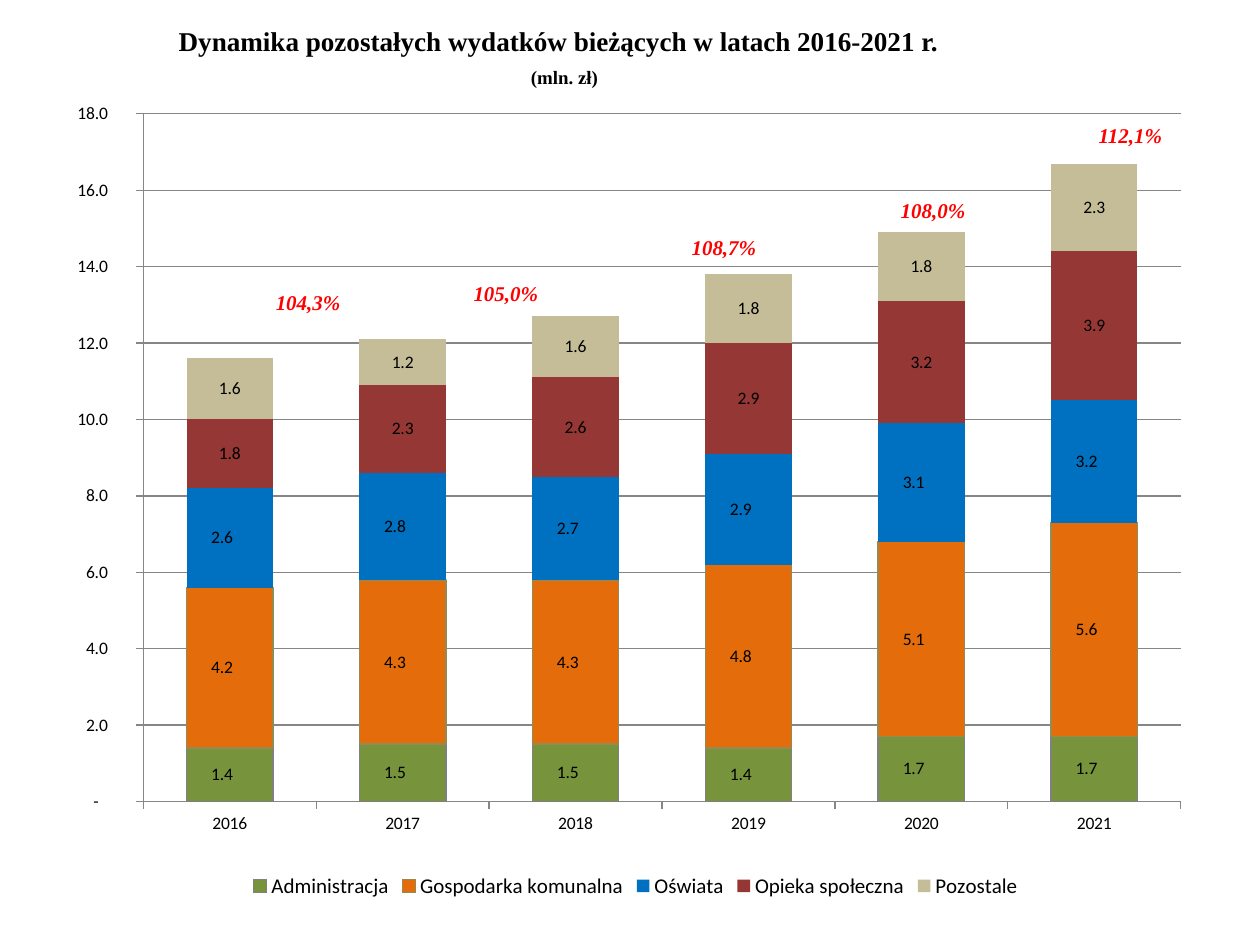
from dataclasses import dataclass

from lxml import etree
from pptx import Presentation
from pptx.chart.data import CategoryChartData
from pptx.dml.color import RGBColor
from pptx.enum.chart import XL_CHART_TYPE as ChartType
from pptx.enum.chart import XL_LABEL_POSITION as LabelPosition
from pptx.enum.chart import XL_LEGEND_POSITION as LegendPosition
from pptx.enum.chart import XL_TICK_MARK as TickMark
from pptx.enum.text import MSO_ANCHOR, MSO_AUTO_SIZE, PP_ALIGN
from pptx.oxml.ns import qn
from pptx.util import Inches, Pt


@dataclass(frozen=True)
class Theme:
    heading_font: str = "Times New Roman"
    chart_font: str = "Calibri"
    ink: str = "000000"
    growth: str = "FF0000"
    grid: str = "868686"
    title_size: float = 15.5
    unit_size: float = 10.8
    growth_size: float = 12
    legend_size: float = 12
    label_size: float = 10


THEME = Theme()
ACCOUNTING = (r"_-* #\ ##0.0\ _z_ł_-;\-* #\ ##0.0\ _z_ł_-;"
              r'_-* "-"?\ _z_ł_-;_-@_-')
PLAIN = "0.0"
PLOT_AREA = {"x": 0.09, "y": 0.069, "w": 0.864, "h": 0.811}

YEARS = ["2016", "2017", "2018", "2019", "2020", "2021"]
# name, values, fill, outline, label format
EXPENSES = [
    ("Administracja", (1.4, 1.5, 1.5, 1.4, 1.7, 1.7), "77933C", "808080", ACCOUNTING),
    ("Gospodarka komunalna", (4.2, 4.3, 4.3, 4.8, 5.1, 5.6), "E46C0A", "948A54", ACCOUNTING),
    ("Oświata", (2.6, 2.8, 2.7, 2.9, 3.1, 3.2), "0070C0", None, ACCOUNTING),
    ("Opieka społeczna", (1.8, 2.3, 2.6, 2.9, 3.2, 3.9), "953735", None, PLAIN),
    ("Pozostale", (1.6, 1.2, 1.6, 1.8, 1.8, 2.3), "C4BD97", None, PLAIN),
]
# growth on the previous year, left, top
GROWTH_RATES = [
    ("104,3%", 2.09, 2.25),
    ("105,0%", 3.66, 2.18),
    ("108,7%", 5.39, 1.81),
    ("108,0%", 7.05, 1.52),
    ("112,1%", 8.62, 0.92),
]


def style_font(font, name, size, color, bold=False, italic=False):
    font.name, font.size = name, Pt(size)
    font.bold, font.italic = bold, italic
    font.color.rgb = RGBColor.from_string(color)


def set_title(slide, heading, unit):
    title = slide.shapes.title
    title.left, title.top = Inches(1.3), Inches(0.13)
    title.width, title.height = Inches(6.54), Inches(0.53)
    frame = title.text_frame
    frame.auto_size, frame.word_wrap = MSO_AUTO_SIZE.NONE, True
    frame.vertical_anchor = MSO_ANCHOR.TOP
    frame.margin_left = frame.margin_right = frame.margin_bottom = 0
    frame.margin_top = Inches(0.06)
    frame.text = f"{heading}\n{unit}"
    lines = zip(frame.paragraphs, (THEME.title_size, THEME.unit_size),
                (0, 5), (("marR", 0.28), ("marL", 0.1)))
    for paragraph, size, gap, (side, indent) in lines:
        paragraph.alignment = PP_ALIGN.CENTER
        paragraph.space_before = Pt(gap)
        paragraph._p.get_or_add_pPr().set(side, str(Inches(indent)))
        style_font(paragraph.font, THEME.heading_font, size, THEME.ink, bold=True)


def set_plot_area(chart):
    """Fix the inner plot area as fractions of the chart."""
    plot_area = chart._chartSpace.chart.plotArea
    for old in plot_area.findall(qn("c:layout")):
        plot_area.remove(old)
    layout = etree.Element(qn("c:layout"))
    manual = etree.SubElement(layout, qn("c:manualLayout"))
    settings = {"layoutTarget": "inner", "xMode": "edge", "yMode": "edge", **PLOT_AREA}
    for tag, value in settings.items():
        etree.SubElement(manual, qn(f"c:{tag}")).set("val", str(value))
    plot_area.insert(0, layout)


def style_axis(axis):
    axis.major_tick_mark, axis.minor_tick_mark = TickMark.OUTSIDE, TickMark.NONE
    style_font(axis.tick_labels.font, THEME.chart_font, THEME.label_size, THEME.ink)
    style_line(axis.format.line, THEME.grid)


def style_line(line, color):
    line.width = Pt(0.75)
    line.color.rgb = RGBColor.from_string(color)


def style_series(series, fill, outline, label_format):
    series.format.fill.solid()
    series.format.fill.fore_color.rgb = RGBColor.from_string(fill)
    if outline:
        style_line(series.format.line, outline)
    else:
        series.format.line.fill.background()
    labels = series.data_labels
    labels.show_value = True
    labels.position = LabelPosition.CENTER
    labels.number_format, labels.number_format_is_linked = label_format, False
    style_font(labels.font, THEME.chart_font, THEME.label_size, THEME.ink)


def add_expense_chart(slide):
    data = CategoryChartData(number_format=PLAIN)
    data.categories = YEARS
    for name, values, *_ in EXPENSES:
        data.add_series(name, values)
    chart = slide.shapes.add_chart(
        ChartType.COLUMN_STACKED, Inches(0.28), Inches(0.44),
        Inches(9.53), Inches(6.73), data).chart
    chart.has_title = False
    style_font(chart.font, THEME.chart_font, 18, THEME.ink)
    set_plot_area(chart)

    # Axes
    style_axis(chart.category_axis)
    amounts = chart.value_axis
    style_axis(amounts)
    amounts.minimum_scale, amounts.maximum_scale, amounts.major_unit = 0, 18, 2
    amounts.tick_labels.number_format = ACCOUNTING
    amounts.tick_labels.number_format_is_linked = False
    style_line(amounts.major_gridlines.format.line, THEME.grid)

    # Columns
    columns = chart.plots[0]
    columns.gap_width, columns.overlap = 100, 100
    columns.vary_by_categories = False
    for series, (_, _, fill, outline, label_format) in zip(columns.series, EXPENSES):
        style_series(series, fill, outline, label_format)

    # Legend
    chart.has_legend = True
    chart.legend.position = LegendPosition.BOTTOM
    chart.legend.include_in_layout = False
    style_font(chart.legend.font, THEME.chart_font, THEME.legend_size, THEME.ink)


def add_growth_rate(slide, rate, left, top):
    box = slide.shapes.add_textbox(Inches(left), Inches(top), Inches(0.79), Inches(0.3))
    frame = box.text_frame
    frame.word_wrap, frame.auto_size = True, MSO_AUTO_SIZE.SHAPE_TO_FIT_TEXT
    frame.text = rate
    style_font(frame.paragraphs[0].font, THEME.heading_font, THEME.growth_size,
               THEME.growth, bold=True, italic=True)


def main():
    deck = Presentation()
    deck.slide_width, deck.slide_height = Inches(10), Inches(7.5)
    slide = deck.slides.add_slide(deck.slide_layouts.get_by_name("Title Only"))
    set_title(slide, "Dynamika pozostałych wydatków bieżących w latach 2016-2021 r.",
              "(mln. zł)")
    add_expense_chart(slide)
    for rate, left, top in GROWTH_RATES:
        add_growth_rate(slide, rate, left, top)
    deck.save("out.pptx")


if __name__ == "__main__":
    main()
